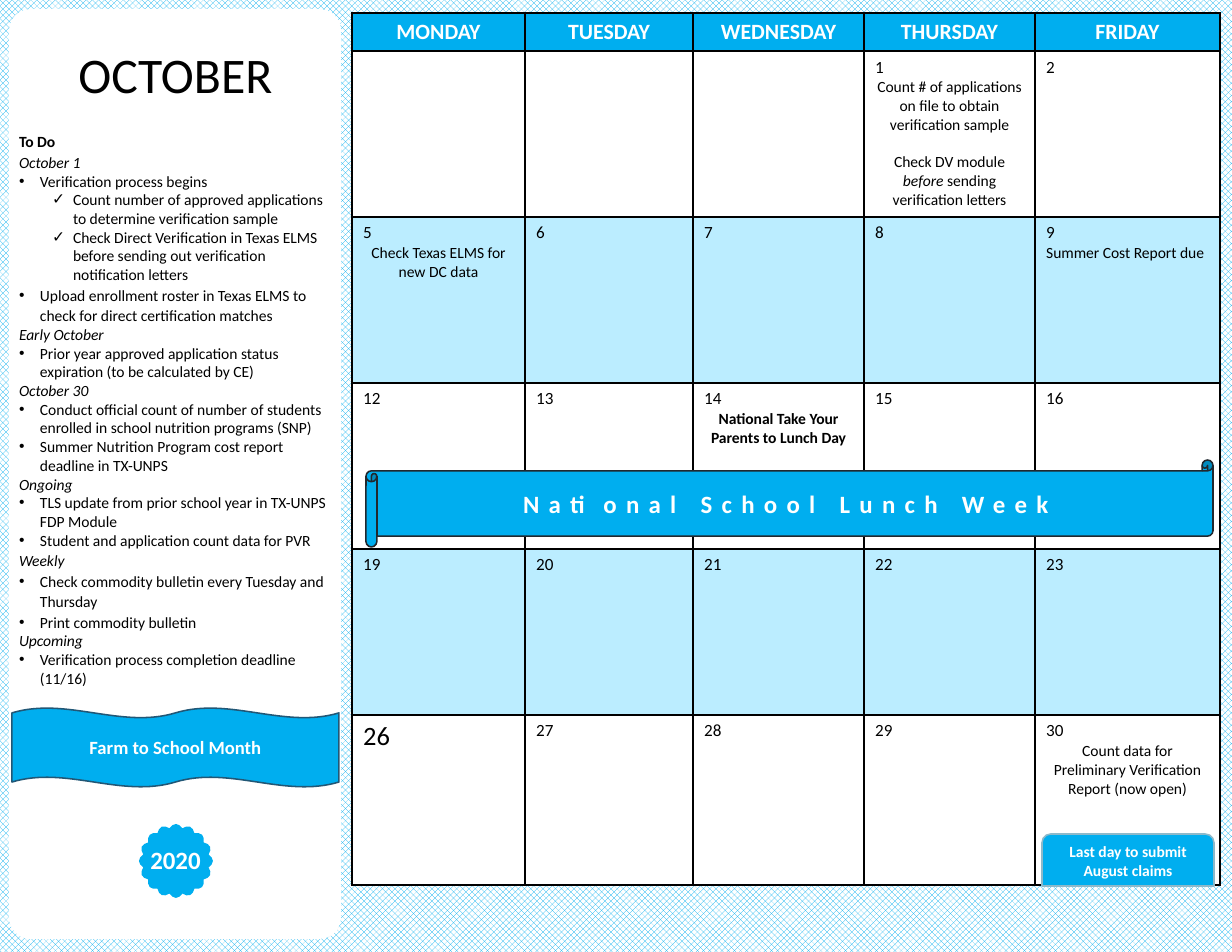
import math
from dataclasses import dataclass

from lxml import etree
from pptx import Presentation
from pptx import util as u
from pptx.dml.color import RGBColor
from pptx.enum import dml, shapes, text
from pptx.oxml.ns import qn

SCALE = 914400 / 112
FONT = "Calibri"
BLUE, PALE, WHITE, BLACK = "00AEEF", "BBEDFF", "FFFFFF", "000000"
LEFT, MID = text.PP_ALIGN.LEFT, text.PP_ALIGN.CENTER
KIND = shapes.MSO_SHAPE


@dataclass
class Run:
    words: str
    size: float = 10
    tint: str = BLACK
    bold: bool = False
    slant: bool = False
    gap: int = 0


@dataclass
class Para:
    runs: list[Run]
    align: text.PP_ALIGN = MID
    lead: float = 1.0
    mark: str = ""
    dent: int = 0
    above: float = 0


@dataclass
class Box:
    x: int
    y: int
    w: int
    h: int


def px(n: float) -> u.Emu:
    return u.Emu(round(n * SCALE))


def hue(code: str) -> RGBColor:
    return RGBColor.from_string(code)


def place(box: Box) -> list[u.Emu]:
    return [px(n) for n in (box.x, box.y, box.w, box.h)]


def paint(item, code: str) -> None:
    item.fill.solid()
    item.fill.fore_color.rgb = hue(code)


def write(frame, paras: list[Para]) -> None:
    for i, para in enumerate(paras):
        p = frame.paragraphs[0] if i == 0 else frame.add_paragraph()
        p.alignment = para.align
        p.line_spacing = para.lead
        p.space_before = u.Pt(para.above)
        if para.mark:
            prop = p._p.get_or_add_pPr()
            prop.set("marL", str(px(para.dent)))
            prop.set("indent", str(-px(21)))
            etree.SubElement(prop, qn("a:buFont")).set("typeface", "Arial")
            etree.SubElement(prop, qn("a:buChar")).set("char", para.mark)
        for run in para.runs:
            r = p.add_run()
            r.text = run.words
            r.font.name, r.font.size = FONT, u.Pt(run.size)
            r.font.bold, r.font.italic = run.bold, run.slant
            r.font.color.rgb = hue(run.tint)
            if run.gap:
                r._r.get_or_add_rPr().set("spc", str(run.gap * 100))


def label(home, box: Box, paras: list[Para]) -> None:
    frame = home.add_textbox(*place(box)).text_frame
    frame.word_wrap = True
    frame.auto_size = text.MSO_AUTO_SIZE.SHAPE_TO_FIT_TEXT
    write(frame, paras)


def panel(home, kind: KIND, box: Box, fill: str, line: str = "", run: Run | None = None):
    item = home.add_shape(kind, *place(box))
    item.shadow.inherit = False
    paint(item, fill)
    if line:
        item.line.color.rgb = hue(line)
        item.line.width = u.Pt(1)
    else:
        item.line.fill.background()
    if run:
        item.text_frame.word_wrap = True
        write(item.text_frame, [Para([run])])
    return item


def seal(home, x: int, y: int, rad: int, code: str) -> None:
    pts = []
    for i in range(64):
        a = math.tau * i / 64
        r = rad * (0.9 + 0.1 * abs(math.cos(8 * a)))
        pts.append((px(x + r * math.cos(a)), px(y + r * math.sin(a))))
    form = home.build_freeform(*pts[0])
    form.add_line_segments(pts[1:], close=True)
    item = form.convert_to_shape()
    item.shadow.inherit = False
    paint(item, code)
    item.line.fill.background()


def frame_cell(cell) -> None:
    prop = cell._tc.get_or_add_tcPr()
    for i, side in enumerate(("lnL", "lnR", "lnT", "lnB")):
        line = etree.Element(qn(f"a:{side}"), w=str(u.Pt(1)))
        solid = etree.SubElement(line, qn("a:solidFill"))
        etree.SubElement(solid, qn("a:srgbClr")).set("val", BLACK)
        prop.insert(i, line)


def month(home) -> None:
    days = ("MONDAY", "TUESDAY", "WEDNESDAY", "THURSDAY", "FRIDAY")
    wide = (173, 168, 171, 171, 185)
    tall = (38, 166, 166, 166, 166, 170)
    notes = {
        1: [Para([Run("Count # of applications on file to obtain verification sample")]),
            Para([Run("Check DV module "), Run("before", slant=True),
                  Run(" sending verification letters")], above=12)],
        5: [Para([Run("Check Texas ELMS for new DC data")])],
        9: [Para([Run("Summer Cost Report due")], LEFT)],
        14: [Para([Run("National Take Your Parents to Lunch Day", bold=True)])],
        30: [Para([Run("Count data for Preliminary Verification Report (now open)")])],
    }
    box = Box(352, 13, sum(wide), sum(tall))
    grid = home.add_table(len(tall), len(wide), *place(box)).table
    for col, w in zip(grid.columns, wide):
        col.width = px(w)
    for row, h in zip(grid.rows, tall):
        row.height = px(h)
    for r in range(len(tall)):
        for c, day in enumerate(days):
            cell = grid.cell(r, c)
            date = 7 * (r - 1) + c - 2
            if r == 0:
                cell.vertical_anchor = text.MSO_ANCHOR.MIDDLE
                write(cell.text_frame, [Para([Run(day, 14, WHITE, True)])])
            elif date > 0:
                size = 17 if date == 26 else 11
                top = Para([Run(str(date), size)], LEFT)
                write(cell.text_frame, [top] + notes.get(date, []))
            paint(cell, BLUE if r == 0 else WHITE if r % 2 else PALE)
            frame_cell(cell)


def head(words: str, lead: float = 1.0, bold: bool = False) -> Para:
    return Para([Run(words, bold=bold, slant=not bold)], LEFT, lead)


def task(words: str, lead: float = 1.0) -> Para:
    return Para([Run(words)], LEFT, lead, "•", 21)


def check(words: str) -> Para:
    return Para([Run(words)], LEFT, 1.0, "✓", 54)


TASKS = [
    head("To Do", 1.1, True),
    head("October 1", 1.1),
    task("Verification process begins"),
    check("Count number of approved applications to determine verification sample"),
    check("Check Direct Verification in Texas ELMS before sending out verification "
          "notification letters"),
    task("Upload enrollment roster in Texas ELMS to check for direct certification matches", 1.1),
    head("Early October"),
    task("Prior year approved application status expiration (to be calculated by CE)"),
    head("October 30"),
    task("Conduct official count of number of students enrolled in school nutrition "
         "programs (SNP)"),
    task("Summer Nutrition Program cost report deadline in TX-UNPS"),
    head("Ongoing"),
    task("TLS update from prior school year in TX-UNPS FDP Module"),
    task("Student and application count data for PVR"),
    head("Weekly", 1.1),
    task("Check commodity bulletin every Tuesday and Thursday", 1.1),
    task("Print commodity bulletin", 1.1),
    head("Upcoming"),
    task("Verification process completion deadline (11/16)"),
]


def main() -> None:
    deck = Presentation()
    deck.slide_width, deck.slide_height = px(1232), px(952)
    slide = deck.slides.add_slide(deck.slide_layouts[6])
    back = slide.background.fill
    back.patterned()
    back.pattern = dml.MSO_PATTERN.LARGE_CHECKER_BOARD
    back.fore_color.rgb, back.back_color.rgb = hue(BLUE), hue(WHITE)
    home = slide.shapes

    side = panel(home, KIND.ROUNDED_RECTANGLE, Box(9, 9, 332, 930), WHITE)
    side.adjustments[0] = 0.065
    month(home)
    label(home, Box(8, 125, 334, 573), TASKS)
    label(home, Box(9, 38, 333, 69), [Para([Run("OCTOBER", 32)])])

    badge = home.add_group_shape().shapes
    seal(badge, 176, 861, 37, BLUE)
    label(badge, Box(133, 839, 85, 41), [Para([Run("2020", 16, WHITE, True)])])

    week = panel(home, KIND.HORIZONTAL_SCROLL, Box(366, 460, 847, 87), BLUE, "21282E",
                 Run("National School Lunch Week", 16, WHITE, True, gap=6))
    week.text_frame.margin_right = px(23)
    due = panel(home, KIND.ROUND_2_SAME_RECTANGLE, Box(1042, 834, 172, 52), BLUE, "8DB9CA",
                Run("Last day to submit August claims", 10, WHITE, True))
    due.text_frame.vertical_anchor = text.MSO_ANCHOR.TOP
    panel(home, KIND.DOUBLE_WAVE, Box(12, 708, 327, 79), BLUE, "215776",
          Run("Farm to School Month", 12, WHITE, True))
    deck.save("out.pptx")


if __name__ == "__main__":
    main()
